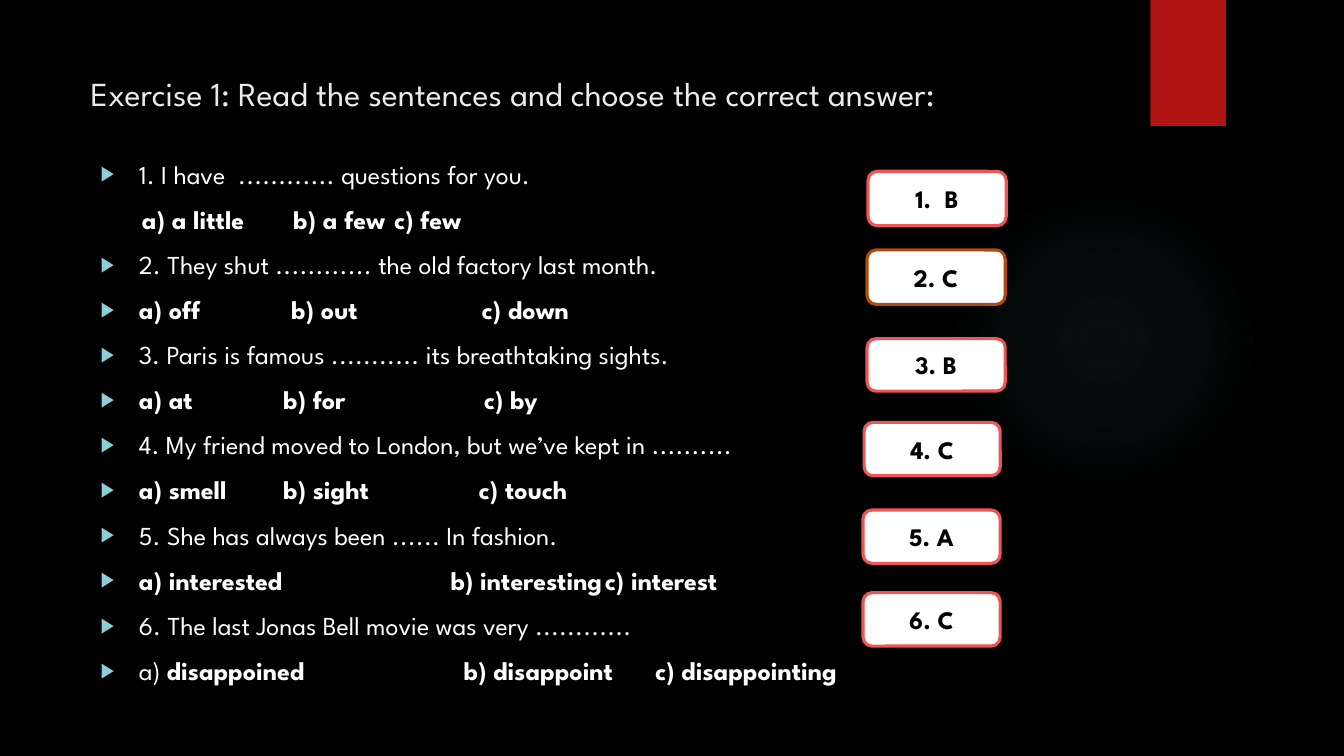
import pptx
import pptx.dml.color
import pptx.enum.shapes
import pptx.enum.text
import pptx.oxml
import pptx.oxml.ns
import pptx.util
from pptx.util import Inches

TITLE = "Exercise 1: Read the sentences and choose the correct answer:"

EXERCISES = [
    ("1. I have  ............ questions for you.",
     ("a) a little", "b) a few", "c) few"), (1.82, 3.69)),
    ("2. They shut ............ the old factory last month.",
     ("a) off", "b) out", "c) down"), (1.89, 3.78)),
    ("3. Paris is famous ........... its breathtaking sights.",
     ("a) at", "b) for", "c) by"), (1.81, 3.8)),
    ("4. My friend moved to London, but we’ve kept in ..........",
     ("a) smell", "b) sight", "c) touch"), (1.81, 3.75)),
    ("5. She has always been ...... In fashion.",
     ("a) interested", "b) interesting", "c) interest"), (1.7, 3.47)),
    ("6. The last Jonas Bell movie was very ............",
     ("a) disappoined", "b) disappoint", "c) disappointing"), (1.9, 3.6)),
]

ANSWERS = [
    ("1.  B", (8.61, 1.7, 1.37, 0.54), "answer_line"),
    ("2. C", (8.6, 2.48, 1.37, 0.54), "second_line"),
    ("3. B", (8.6, 3.36, 1.37, 0.52), "answer_line"),
    ("4. C", (8.57, 4.19, 1.35, 0.53), "answer_line"),
    ("5. A", (8.56, 5.06, 1.36, 0.53), "answer_line"),
    ("6. C", (8.56, 5.88, 1.36, 0.53), "answer_line"),
]

THEME = {
    "font": "League Spartan",
    "background": "000000",
    "ribbon": "B01513",
    "glow": "50B9C1",
    "glow_stops": [(0, 7), (36, 6), (69, 0)],
    "title": "EBEBEB",
    "body": "FFFFFF",
    "bullet": "8AD0D6",
    "answer_fill": "FFFFFF",
    "answer_text": "000000",
    "answer_line": "ED5654",
    "second_line": "B04A0D",
    "title_size": 24,
    "body_size": 18.5,
    "answer_size": 18,
    "line_width": 2.25,
    "space_before": 10,
}
BULLET_INDENT = 0.38
PLAIN_INDENT = 0.41
SHAPE = pptx.enum.shapes.MSO_SHAPE
ALIGN = pptx.enum.text.PP_ALIGN
ANCHOR = pptx.enum.text.MSO_ANCHOR


def color(name):
    return pptx.dml.color.RGBColor.from_string(THEME[name])


def set_all(target, values):
    for name, value in values.items():
        setattr(target, name, value)


def add_span(para, text, role, tint, bold=False):
    span = para.add_run()
    span.text = text
    set_all(span.font, {"name": THEME["font"], "bold": bold,
                        "size": pptx.util.Pt(THEME[role + "_size"])})
    span.font.color.rgb = color(tint)


def add_shape(page, kind, place):
    shape = page.shapes.add_shape(kind, *map(Inches, place))
    shape.shadow.inherit = False
    shape.line.fill.background()
    return shape


def add_text_box(page, place):
    box = page.shapes.add_textbox(*map(Inches, place))
    box.text_frame.word_wrap = True
    return box.text_frame


def add_xml(parent, markup):
    namespace = pptx.oxml.ns.nsdecls("a")
    opening, rest = markup.split(">", 1)
    if opening.endswith("/"):
        opening = f"{opening[:-1]} {namespace}/"
    else:
        opening = f"{opening} {namespace}"
    parent.append(pptx.oxml.parse_xml(f"{opening}>{rest}"))


def format_para(para, bulleted, stops=()):
    props = para._p.get_or_add_pPr()
    indent = BULLET_INDENT if bulleted else PLAIN_INDENT
    props.set("marL", str(Inches(indent)))
    props.set("indent", str(-Inches(indent) if bulleted else 0))
    if bulleted:
        add_xml(props, f'<a:buClr><a:srgbClr val="{THEME["bullet"]}"/></a:buClr>')
        add_xml(props, '<a:buSzPct val="80000"/>')
        add_xml(props, '<a:buFont typeface="Arial"/>')
        add_xml(props, '<a:buChar char="▶"/>')
    else:
        add_xml(props, "<a:buNone/>")
    if stops:
        tabs = "".join(f'<a:tab pos="{Inches(stop)}" algn="l"/>' for stop in stops)
        add_xml(props, f"<a:tabLst>{tabs}</a:tabLst>")


def add_glow(page):
    glow = add_shape(page, SHAPE.OVAL, (9.41, 1.83, 3.08, 3.08))
    stops = "".join(
        f'<a:gs pos="{position * 1000}"><a:srgbClr val="{THEME["glow"]}">'
        f'<a:alpha val="{alpha * 1000}"/></a:srgbClr></a:gs>'
        for position, alpha in THEME["glow_stops"])
    gradient = pptx.oxml.parse_xml(
        f'<a:gradFill {pptx.oxml.ns.nsdecls("a")}><a:gsLst>{stops}</a:gsLst>'
        '<a:path path="circle"><a:fillToRect l="50000" t="50000" r="50000" b="50000"/>'
        '</a:path></a:gradFill>')
    glow.fill.background()
    props = glow._element.spPr
    props.replace(props.find(pptx.oxml.ns.qn("a:noFill")), gradient)


def add_exercises(page):
    frame = add_text_box(page, (0.9, 1.52, 7.67, 5.22))
    for number, (question, options, stops) in enumerate(EXERCISES):
        para = frame.add_paragraph() if number else frame.paragraphs[0]
        format_para(para, True)
        if number:
            para.space_before = pptx.util.Pt(THEME["space_before"])
        add_span(para, question, "body", "body")

        para = frame.add_paragraph()
        format_para(para, number > 0, stops)
        para.space_before = pptx.util.Pt(THEME["space_before"])
        text = "\t".join(options)
        if number == len(EXERCISES) - 1:
            add_span(para, text[:3], "body", "body")
            text = text[3:]
        add_span(para, text, "body", "body", True)


def add_answers(page):
    for text, place, outline in ANSWERS:
        box = add_shape(page, SHAPE.ROUNDED_RECTANGLE, place)
        box.fill.solid()
        box.fill.fore_color.rgb = color("answer_fill")
        box.line.color.rgb = color(outline)
        box.line.width = pptx.util.Pt(THEME["line_width"])
        box.text_frame.vertical_anchor = ANCHOR.MIDDLE
        para = box.text_frame.paragraphs[0]
        para.alignment = ALIGN.CENTER
        add_span(para, text, "answer", "answer_text", True)


def main():
    deck = pptx.Presentation()
    set_all(deck, {"slide_width": Inches(13.33), "slide_height": Inches(7.5)})
    page = deck.slides.add_slide(deck.slide_layouts[6])
    page.background.fill.solid()
    page.background.fill.fore_color.rgb = color("background")

    add_glow(page)
    ribbon = add_shape(page, SHAPE.RECTANGLE, (11.41, 0, 0.75, 1.25))
    ribbon.fill.solid()
    ribbon.fill.fore_color.rgb = color("ribbon")

    title = add_text_box(page, (0.72, 0.67, 10.83, 0.79))
    title.margin_left = Inches(0.18)
    add_span(title.paragraphs[0], TITLE, "title", "title")
    add_exercises(page)
    add_answers(page)
    deck.save("out.pptx")


if __name__ == "__main__":
    main()
